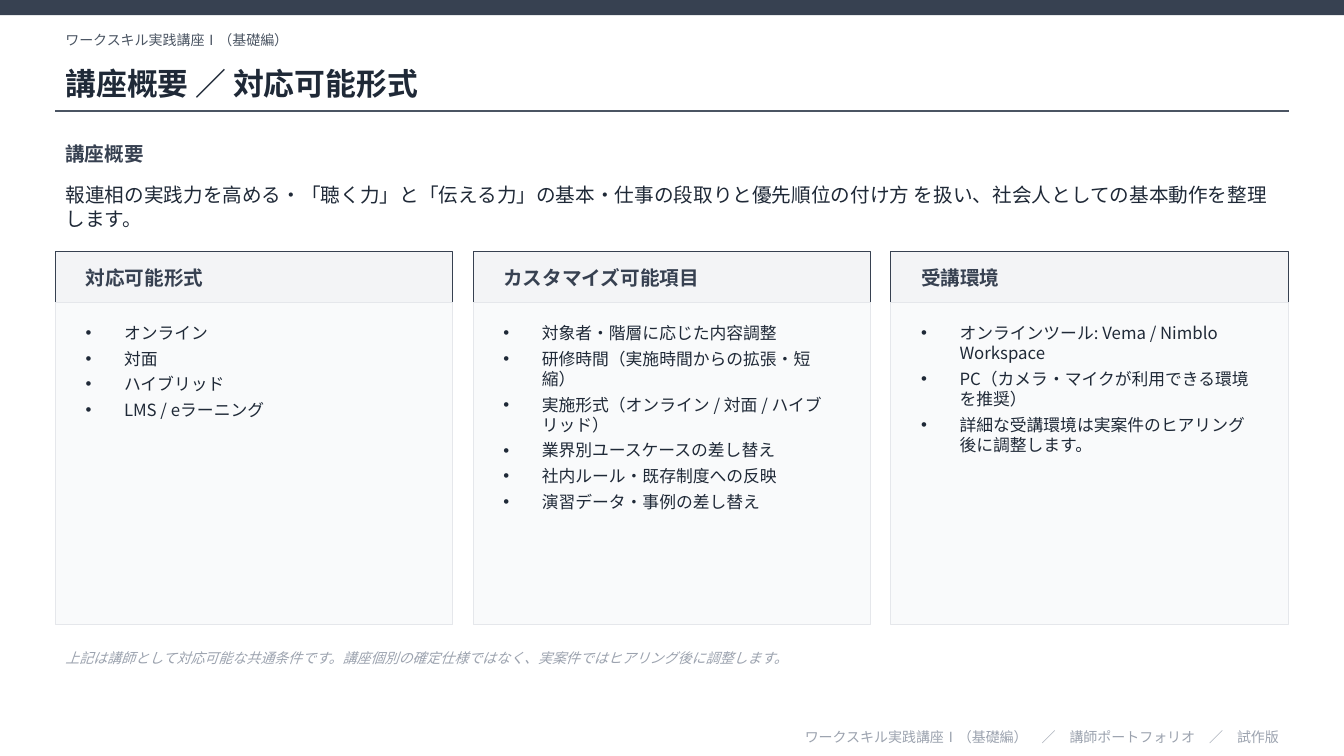
import pptx
import pptx.dml.color
import pptx.enum.shapes
import pptx.enum.text
import pptx.oxml.ns
import pptx.util
import lxml.etree

Inches, Pt = pptx.util.Inches, pptx.util.Pt
RGB = pptx.dml.color.RGBColor
Align, Anchor = pptx.enum.text.PP_ALIGN, pptx.enum.text.MSO_ANCHOR
RECT = pptx.enum.shapes.MSO_SHAPE.RECTANGLE
qn = pptx.oxml.ns.qn

FACE = "Noto Sans CJK JP"
INK = RGB(0x1F, 0x29, 0x37)
SLATE = RGB(0x37, 0x41, 0x51)
GREY = RGB(0x4B, 0x55, 0x63)
PALE = RGB(0x9C, 0xA3, 0xAF)
HEAD = RGB(0xF3, 0xF4, 0xF6)
PANEL = RGB(0xF9, 0xFA, 0xFB)
EDGE = RGB(0xE5, 0xE7, 0xEB)

# Page and column grid
WIDE, HIGH = 13.33, 7.5
LEFT, GAP, PAD = 0.55, 0.2, 0.2
SPAN = WIDE - 2 * LEFT
COL = (SPAN - 2 * GAP) / 3
TOP, BAR, BODY = 2.5, 0.5, 3.2

deck = pptx.Presentation()
deck.slide_width, deck.slide_height = Inches(WIDE), Inches(HIGH)
slide = deck.slides.add_slide(deck.slide_layouts.get_by_name("Comparison"))
tree = slide.shapes
slots = {p.placeholder_format.idx: p for p in slide.placeholders}


def block(x, y, w, h, fill, edge=None):
    box = tree.add_shape(RECT, *map(Inches, (x, y, w, h)))
    box.shadow.inherit = False
    box.fill.solid()
    box.fill.fore_color.rgb = fill
    if edge is None:
        box.line.fill.background()
    else:
        box.line.color.rgb = edge
        box.line.width = Pt(0.75)


def write(place, lines, size, color, slot=None, bold=False, italic=False,
          align=Align.LEFT, anchor=Anchor.MIDDLE, mark=False):
    x, y, w, h = map(Inches, place)
    if slot is None:
        box = tree.add_textbox(x, y, w, h)
    else:
        box = slot
        tree._spTree.append(box._element)  # bring above the panels
        box.left, box.top, box.width, box.height = x, y, w, h
    frame = box.text_frame
    form = {"word_wrap": True, "vertical_anchor": anchor,
            "auto_size": pptx.enum.text.MSO_AUTO_SIZE.NONE}
    for key, val in form.items():
        setattr(frame, key, val)
    frame.text = "\n".join(lines)
    for para in frame.paragraphs:
        props = para._p.get_or_add_pPr()
        indent = Inches(0.38) if mark else 0
        props.set("marL", str(indent))
        props.set("indent", str(-indent))
        if mark:
            lxml.etree.SubElement(props, qn("a:buChar")).set("char", "•")
        else:
            lxml.etree.SubElement(props, qn("a:buNone"))
        form = {"alignment": align, "space_before": Pt(0),
                "space_after": Pt(4 if mark else 0)}
        for key, val in form.items():
            setattr(para, key, val)
        for run in para.runs:
            form = {"name": FACE, "size": Pt(size), "bold": bold, "italic": italic}
            for key, val in form.items():
                setattr(run.font, key, val)
            run.font.color.rgb = color
            east = lxml.etree.SubElement(run._r.get_or_add_rPr(), qn("a:ea"))
            east.set("typeface", FACE)


# Top band, course name, title and rule
block(0, 0, WIDE, 0.15, SLATE)
write((LEFT, 0.25, SPAN, 0.3), ["ワークスキル実践講座Ⅰ（基礎編）"], 10, GREY)
write((LEFT, 0.55, SPAN, 0.55), ["講座概要 ／ 対応可能形式"], 22, INK,
      slot=slots[0], bold=True)
rule = tree.add_connector(pptx.enum.shapes.MSO_CONNECTOR.STRAIGHT,
                          Inches(LEFT), Inches(1.1), Inches(LEFT + SPAN), Inches(1.1))
rule.line.color.rgb = GREY
rule.line.width = Pt(1)
lxml.etree.SubElement(rule._element.spPr, qn("a:effectLst"))

# Overview
write((LEFT, 1.35, SPAN, 0.35), ["講座概要"], 14, SLATE, bold=True)
write((LEFT, 1.75, SPAN, 0.6),
      ["報連相の実践力を高める・「聴く力」と「伝える力」の基本・仕事の段取りと優先順位の付け方 "
       "を扱い、社会人としての基本動作を整理します。"], 14, INK, slot=slots[4])

# Three cards
cards = [
    ("対応可能形式", ["オンライン", "対面", "ハイブリッド", "LMS / eラーニング"]),
    ("カスタマイズ可能項目", [
        "対象者・階層に応じた内容調整",
        "研修時間（実施時間からの拡張・短縮）",
        "実施形式（オンライン / 対面 / ハイブリッド）",
        "業界別ユースケースの差し替え",
        "社内ルール・既存制度への反映",
        "演習データ・事例の差し替え"]),
    ("受講環境", [
        "オンラインツール: Vema / Nimblo Workspace",
        "PC（カメラ・マイクが利用できる環境を推奨）",
        "詳細な受講環境は実案件のヒアリング後に調整します。"]),
]
for i, (name, items) in enumerate(cards):
    x = LEFT + i * (COL + GAP)
    inner = COL - 2 * PAD
    block(x, TOP, COL, BAR, HEAD, SLATE)
    write((x + PAD, TOP, inner, BAR), [name], 14, SLATE, bold=True)
    block(x, TOP + BAR, COL, BODY, PANEL, EDGE)
    write((x + PAD, TOP + BAR + 0.15, inner, BODY - 0.35), items, 12, INK,
          slot=slots[i + 1], anchor=Anchor.TOP, mark=True)

# Note and footer
write((LEFT, 6.35, SPAN, 0.35),
      ["上記は講師として対応可能な共通条件です。講座個別の確定仕様ではなく、"
       "実案件ではヒアリング後に調整します。"], 10, PALE, italic=True)
write((LEFT, 7.2, SPAN, 0.22),
      ["ワークスキル実践講座Ⅰ（基礎編）　／　講師ポートフォリオ　／　試作版"],
      10, PALE, align=Align.RIGHT)

deck.save("out.pptx")
